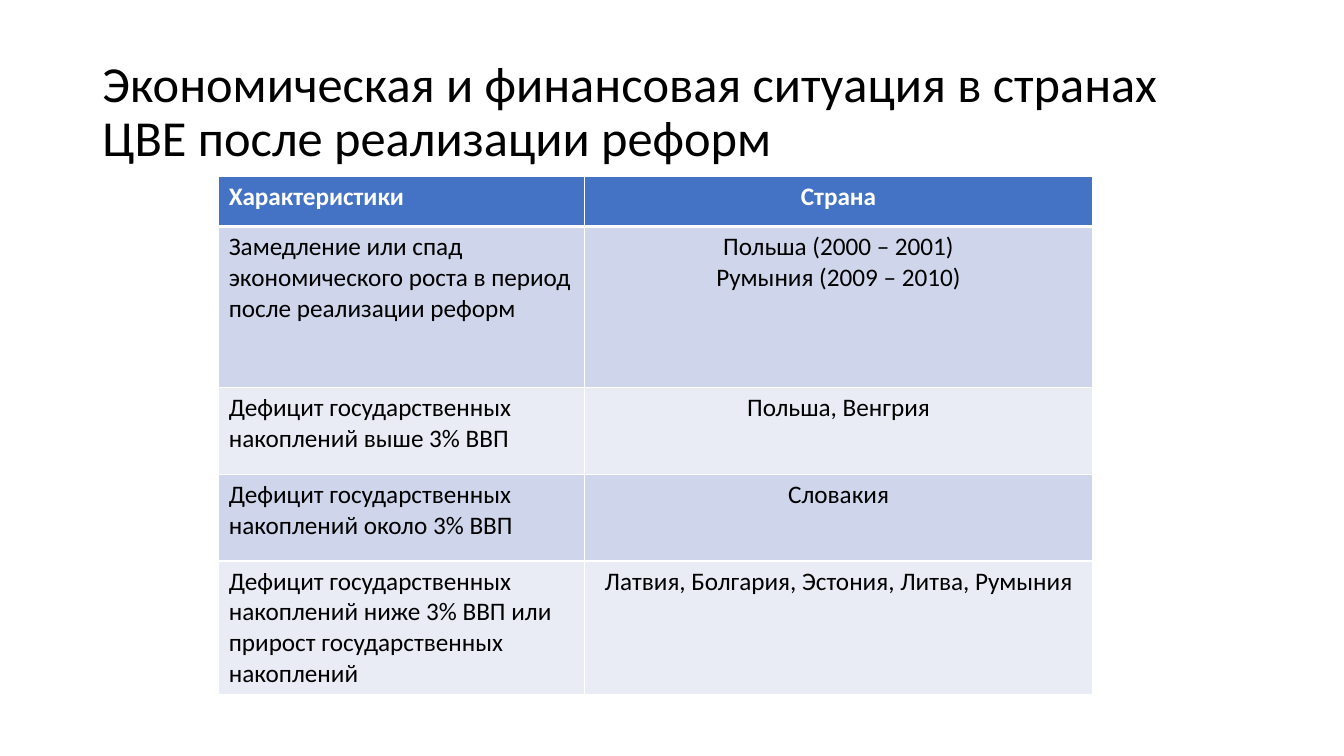
from lxml import etree
from pptx import Presentation
from pptx.dml.color import RGBColor
from pptx.enum import text
from pptx.oxml import ns
from pptx.util import Pt

# Content
TITLE = "Экономическая и финансовая ситуация в странах ЦВЕ после реализации реформ"
ROWS = [  # characteristic, countries, row height
    ("Характеристики", "Страна", 35.5),
    ("Замедление или спад экономического роста в период после реализации реформ",
     "Польша (2000 – 2001)\nРумыния (2009 – 2010)", 115),
    ("Дефицит государственных накоплений выше 3% ВВП", "Польша, Венгрия", 62),
    ("Дефицит государственных накоплений около 3% ВВП", "Словакия", 62),
    ("Дефицит государственных накоплений ниже 3% ВВП или прирост "
     "государственных накоплений", "Латвия, Болгария, Эстония, Литва, Румыния", 95),
]
COLUMN_WIDTHS = (261.5, 362.5)
COLUMN_ALIGN = (text.PP_ALIGN.LEFT, text.PP_ALIGN.CENTER)

FONT = "Calibri"
BLACK = RGBColor(0x00, 0x00, 0x00)
WHITE = RGBColor(0xFF, 0xFF, 0xFF)
HEADER_BLUE = RGBColor(0x44, 0x72, 0xC4)
BANDS = (RGBColor(0xE9, 0xEB, 0xF5), RGBColor(0xCF, 0xD5, 0xEA))


def set_border(cell, side, width):
    """Add a white border; call in the order L, R, T, B and before the fill."""
    line = etree.SubElement(cell._tc.get_or_add_tcPr(), ns.qn(f"a:ln{side}"),
                            w=str(Pt(width)))
    fill = etree.SubElement(line, ns.qn("a:solidFill"))
    etree.SubElement(fill, ns.qn("a:srgbClr"), val=str(WHITE))


def set_font(p, size, color, bold=False):
    p.font.name = FONT
    p.font.size = Pt(size)
    p.font.color.rgb = color
    p.font.bold = bold


prs = Presentation()
prs.slide_width, prs.slide_height = Pt(960), Pt(540)
s = prs.slides.add_slide(prs.slide_layouts[5])

# Title
title = s.shapes.title
title.left, title.top, title.width, title.height = Pt(66), Pt(28.75), Pt(828), Pt(104.5)
tf = title.text_frame
tf.text = TITLE
tf.word_wrap = True
tf.auto_size = text.MSO_AUTO_SIZE.NONE
tf.vertical_anchor = text.MSO_ANCHOR.MIDDLE
p = tf.paragraphs[0]
p.alignment = text.PP_ALIGN.LEFT
p.line_spacing = 0.9
set_font(p, 36, BLACK)

# Table
table = s.shapes.add_table(
    len(ROWS), len(COLUMN_WIDTHS), Pt(156.25), Pt(126.25),
    Pt(sum(COLUMN_WIDTHS)), Pt(sum(row[-1] for row in ROWS))).table
for column, width in zip(table.columns, COLUMN_WIDTHS):
    column.width = Pt(width)

for i, (*texts, height) in enumerate(ROWS):
    table.rows[i].height = Pt(height)
    header = i == 0
    for j, words in enumerate(texts):
        cell = table.cell(i, j)
        cell.text = words
        for side in "LRTB":
            thick = (header and side == "B") or (i == 1 and side == "T")
            set_border(cell, side, 3 if thick else 1)
        cell.fill.solid()
        cell.fill.fore_color.rgb = HEADER_BLUE if header else BANDS[i % 2]
        for p in cell.text_frame.paragraphs:
            p.alignment = COLUMN_ALIGN[j]
            set_font(p, 18, WHITE if header else BLACK, header)

prs.save("out.pptx")
